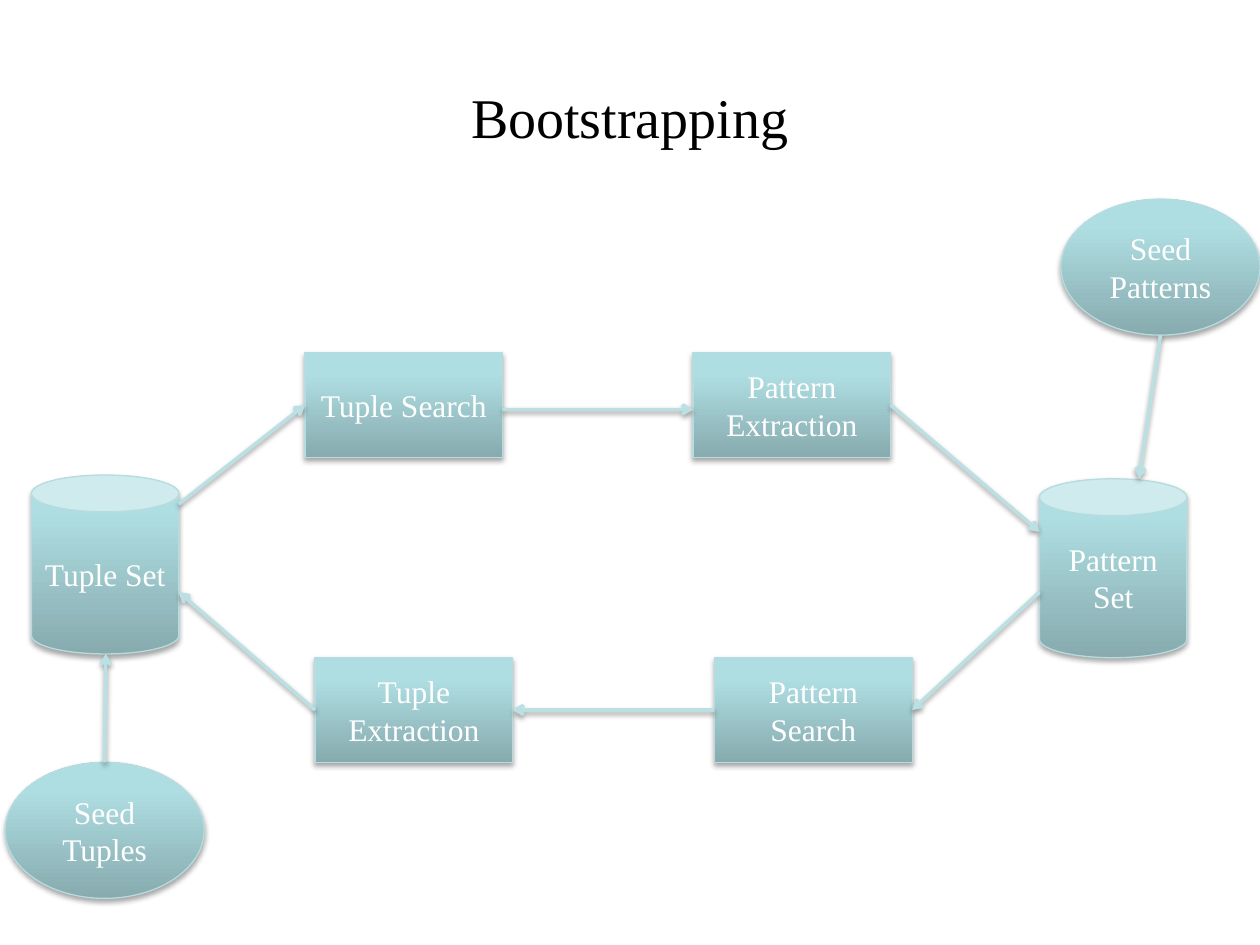
"""Build a slide showing the bootstrapping cycle between tuples and patterns."""
from copy import deepcopy

from pptx import Presentation
from pptx.dml.color import RGBColor
from pptx.enum.shapes import MSO_CONNECTOR as LINK, MSO_SHAPE as SHAPE
from pptx.enum.text import MSO_ANCHOR, PP_ALIGN
from pptx.oxml import parse_xml
from pptx.oxml.ns import nsdecls, qn
from pptx.util import Inches, Pt

COLORS = {
    "title": "000000", "label": "FFFFFF", "outline": "B6DCDF", "arrow": "BBE0E3",
    "dark": "87ABAE", "mid": "AFDEE2", "light": "AFE0E4", "shadow": "000000",
}
GRADIENT = [(0, "dark"), (0.8, "mid"), (1, "light")]
SIZES = {SHAPE.RECTANGLE: (1.57, 0.83), SHAPE.OVAL: (1.58, 1.08), SHAPE.CAN: (1.17, 1.42)}


def write(shape, text, size, color):
    frame = shape.text_frame
    frame.word_wrap = True
    frame.vertical_anchor = MSO_ANCHOR.MIDDLE
    paragraph = frame.paragraphs[0]
    paragraph.alignment = PP_ALIGN.CENTER
    run = paragraph.add_run()
    run.text = text
    run.font.name = "Times New Roman"
    run.font.size = Pt(size)
    run.font.color.rgb = RGBColor.from_string(COLORS[color])


def cast_shadow(shape, opacity, distance):
    shape._element.spPr.append(parse_xml(
        f'<a:effectLst {nsdecls("a")}><a:outerShdw blurRad="{Pt(3.1)}" dist="{Pt(distance)}" '
        f'dir="5400000" rotWithShape="0"><a:srgbClr val="{COLORS["shadow"]}">'
        f'<a:alpha val="{opacity * 1000}"/></a:srgbClr></a:outerShdw></a:effectLst>'))


prs = Presentation()
prs.slide_width, prs.slide_height = Inches(10), Inches(7.5)
slide = prs.slides.add_slide(prs.slide_layouts[6])

title = slide.shapes.add_textbox(Inches(0.5), Inches(0.3), Inches(9), Inches(1.25))
write(title, "Bootstrapping", 32, "title")

steps = {}
for label, kind, left, top in [
    ("Pattern Extraction", SHAPE.RECTANGLE, 5.5, 2.8),
    ("Tuple Search", SHAPE.RECTANGLE, 2.42, 2.8),
    ("Seed Patterns", SHAPE.OVAL, 8.42, 1.58),
    ("Pattern Search", SHAPE.RECTANGLE, 5.67, 5.22),
    ("Pattern Set", SHAPE.CAN, 8.25, 3.8),
    ("Tuple Extraction", SHAPE.RECTANGLE, 2.5, 5.22),
    ("Tuple Set", SHAPE.CAN, 0.25, 3.77),
    ("Seed Tuples", SHAPE.OVAL, 0.04, 6.05),
]:
    width, height = SIZES[kind]
    step = slide.shapes.add_shape(kind, Inches(left), Inches(top), Inches(width), Inches(height))
    step.fill.gradient()
    step.fill.gradient_angle = 90
    stops = step._element.spPr.find(qn("a:gradFill")).find(qn("a:gsLst"))
    stops.append(deepcopy(stops[-1]))
    for stop, (position, color) in zip(step.fill.gradient_stops, GRADIENT):
        stop.position = position
        stop.color.rgb = RGBColor.from_string(COLORS[color])
    step.line.color.rgb = RGBColor.from_string(COLORS["outline"])
    step.line.width = Pt(0.75)
    cast_shadow(step, 35, 1.8)
    write(step, label, 18, "label")
    steps[label] = step

for kind, start, end, source, target in [
    (LINK.ELBOW, (3.99, 3.25), (5.5, 3.25), None, None),
    (LINK.STRAIGHT, (7.07, 3.22), (8.25, 4.22), ("Pattern Extraction", 3), None),
    (LINK.STRAIGHT, (9.21, 2.66), (9.04, 3.8), None, None),
    (LINK.STRAIGHT, (8.25, 4.7), (7.24, 5.64), None, ("Pattern Search", 3)),
    (LINK.ELBOW, (5.67, 5.64), (4.07, 5.64), ("Pattern Search", 1), ("Tuple Extraction", 3)),
    (LINK.STRAIGHT, (2.5, 5.64), (1.42, 4.7), ("Tuple Extraction", 1), None),
    (LINK.STRAIGHT, (1.42, 4), (2.42, 3.22), None, ("Tuple Search", 1)),
    (LINK.STRAIGHT, (0.83, 6.05), (0.84, 5.19), None, None),
]:
    flow = slide.shapes.add_connector(kind, *(Inches(value) for value in start + end))
    if source:
        flow.begin_connect(steps[source[0]], source[1])
    if target:
        flow.end_connect(steps[target[0]], target[1])
    flow.line.color.rgb = RGBColor.from_string(COLORS["arrow"])
    flow.line.width = Pt(2)
    flow.line._ln.append(parse_xml(f'<a:tailEnd {nsdecls("a")} type="arrow"/>'))
    cast_shadow(flow, 38, 1.6)

prs.save("out.pptx")
